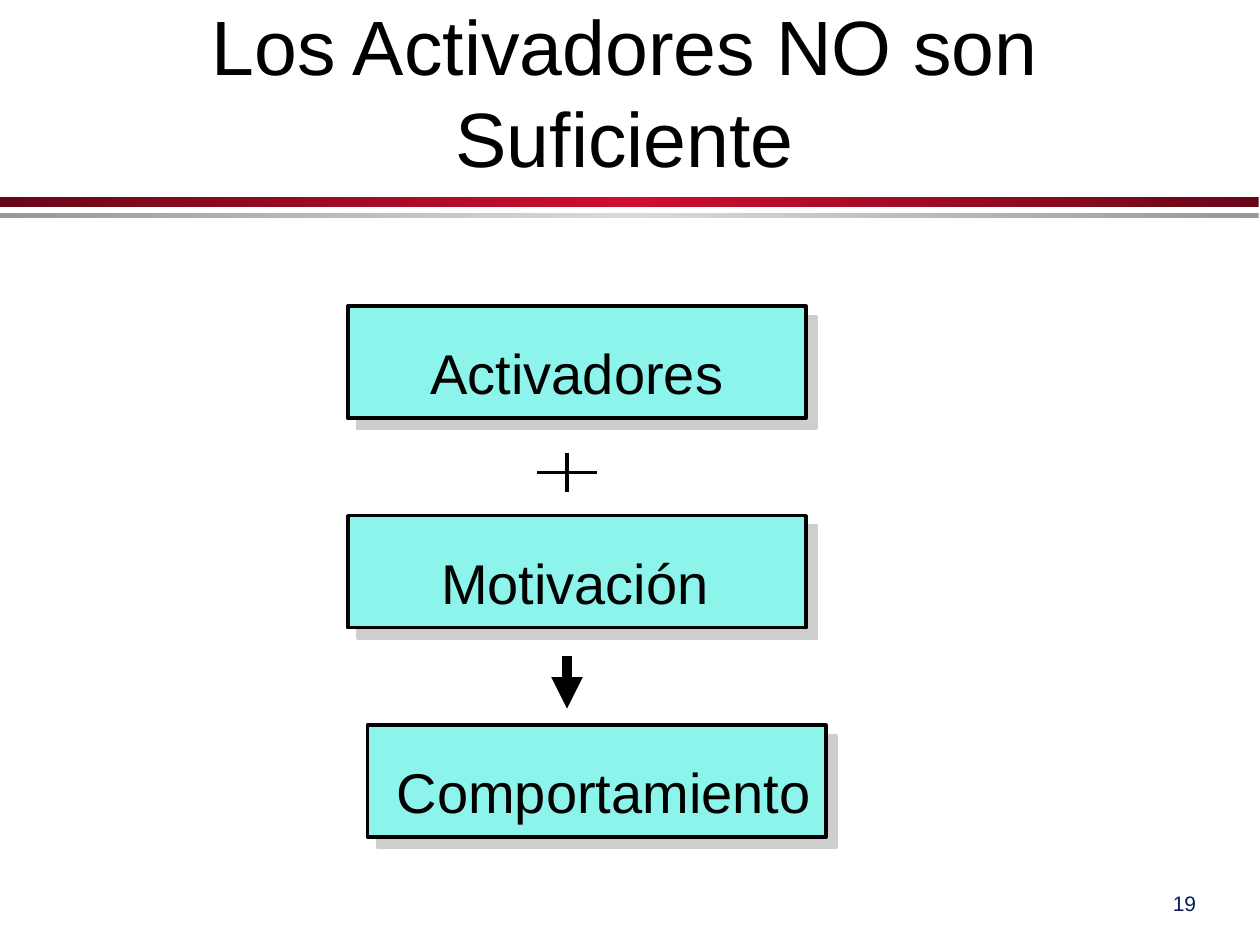
from copy import deepcopy
from dataclasses import dataclass
from lxml.etree import SubElement
from pptx import Presentation
from pptx.dml.color import RGBColor as RGB
from pptx.enum.shapes import MSO_CONNECTOR as CONNECTOR, MSO_SHAPE as SHAPE
from pptx.enum.text import MSO_ANCHOR as ANCHOR, MSO_AUTO_SIZE as FIT, PP_ALIGN as ALIGN
from pptx.oxml.ns import qn
from pptx.util import Pt


@dataclass(frozen=True)
class Theme:
    font: str = "Arial"
    ink: str = "000000"
    box: str = "8CF4EA"
    shadow: str = "CECECE"
    number: str = "081D58"
    red_band: tuple = ("670718", "CF0E30", "670718")
    gray_band: tuple = ("989898", "DADADA", "989898")
    title_size: int = 44
    label_size: int = 32
    number_size: int = 12


class Canvas:
    def __init__(self, slide, theme):
        self.shapes = slide.shapes
        self.theme = theme

    def rect(self, left, top, width, height):
        rect = self.shapes.add_shape(SHAPE.RECTANGLE, Pt(left), Pt(top), Pt(width), Pt(height))
        rect.shadow.inherit = False
        return rect

    def band(self, top, height, colors):
        band = self.rect(0, top, 719.3, height)
        band.line.fill.background()
        band.fill.gradient()
        band.fill.gradient_angle = 0
        stops = next(band._element.iter(qn("a:gsLst")))
        stops.append(deepcopy(stops[0]))
        for index, (stop, color) in enumerate(zip(band.fill.gradient_stops, colors)):
            stop.position = index / 2
            stop.color.rgb = RGB.from_string(color)

    def box(self, left, top):
        box = self.rect(left, top, 262, 64)
        box.fill.solid()
        box.fill.fore_color.rgb = RGB.from_string(self.theme.box)
        box.line.color.rgb = RGB.from_string(self.theme.ink)
        box.line.width = Pt(2)
        effects = box._element.spPr.find(qn("a:effectLst"))
        shadow = SubElement(effects, qn("a:outerShdw"), blurRad="0", dist=str(Pt(8.5)),
                            dir=str(45 * 60000), algn="ctr", rotWithShape="0")
        SubElement(shadow, qn("a:srgbClr"), val=self.theme.shadow)

    def text(self, words, left, top, width, height, size, color=None, wrap=False,
             align=ALIGN.LEFT, anchor=ANCHOR.TOP, fit=FIT.SHAPE_TO_FIT_TEXT):
        frame = self.shapes.add_textbox(Pt(left), Pt(top), Pt(width), Pt(height)).text_frame
        frame.word_wrap = wrap
        frame.auto_size = fit
        frame.vertical_anchor = anchor
        paragraph = frame.paragraphs[0]
        paragraph.alignment = align
        run = paragraph.add_run()
        run.text = words
        run.font.name = self.theme.font
        run.font.size = Pt(size)
        run.font.color.rgb = RGB.from_string(color or self.theme.ink)

    def line(self, x1, y1, x2, y2, weight=2, arrow=False):
        line = self.shapes.add_connector(CONNECTOR.STRAIGHT, Pt(x1), Pt(y1), Pt(x2), Pt(y2))
        line.line.color.rgb = RGB.from_string(self.theme.ink)
        line.line.width = Pt(weight)
        if arrow:
            SubElement(line.line._get_or_add_ln(), qn("a:tailEnd"), type="triangle")
        SubElement(line._element.spPr, qn("a:effectLst"))


def main():
    deck = Presentation()
    deck.slide_width, deck.slide_height = Pt(720), Pt(540)
    theme = Theme()
    canvas = Canvas(deck.slides.add_slide(deck.slide_layouts[6]), theme)

    canvas.band(112.5, 5.7, theme.red_band)
    canvas.band(121.6, 3, theme.gray_band)
    canvas.text("Los Activadores NO son Suficiente", 48.2, 18, 617.8, 90, theme.title_size,
                wrap=True, align=ALIGN.CENTER, anchor=ANCHOR.BOTTOM, fit=FIT.NONE)

    first_top, pitch = 175, 119.7
    steps = [
        ("Activadores", 198.7, 239, 183),
        ("Motivación", 198.7, 245, 168.5),
        ("Comportamiento", 210, 219.6, 252),
    ]
    for index, (name, box_left, name_left, name_width) in enumerate(steps):
        top = first_top + index * pitch
        canvas.box(box_left, top)
        canvas.text(name, name_left, top + 15, name_width, 46, theme.label_size)

    axis, plus_y = 324, 270
    canvas.line(axis, plus_y - 11, axis, plus_y + 11)
    canvas.line(axis - 17, plus_y, axis + 17, plus_y)
    canvas.line(axis, 375, axis, 405, weight=6, arrow=True)

    canvas.text("19", 663.1, 505.4, 28, 21.6, theme.number_size, theme.number)
    deck.save("out.pptx")


if __name__ == "__main__":
    main()
